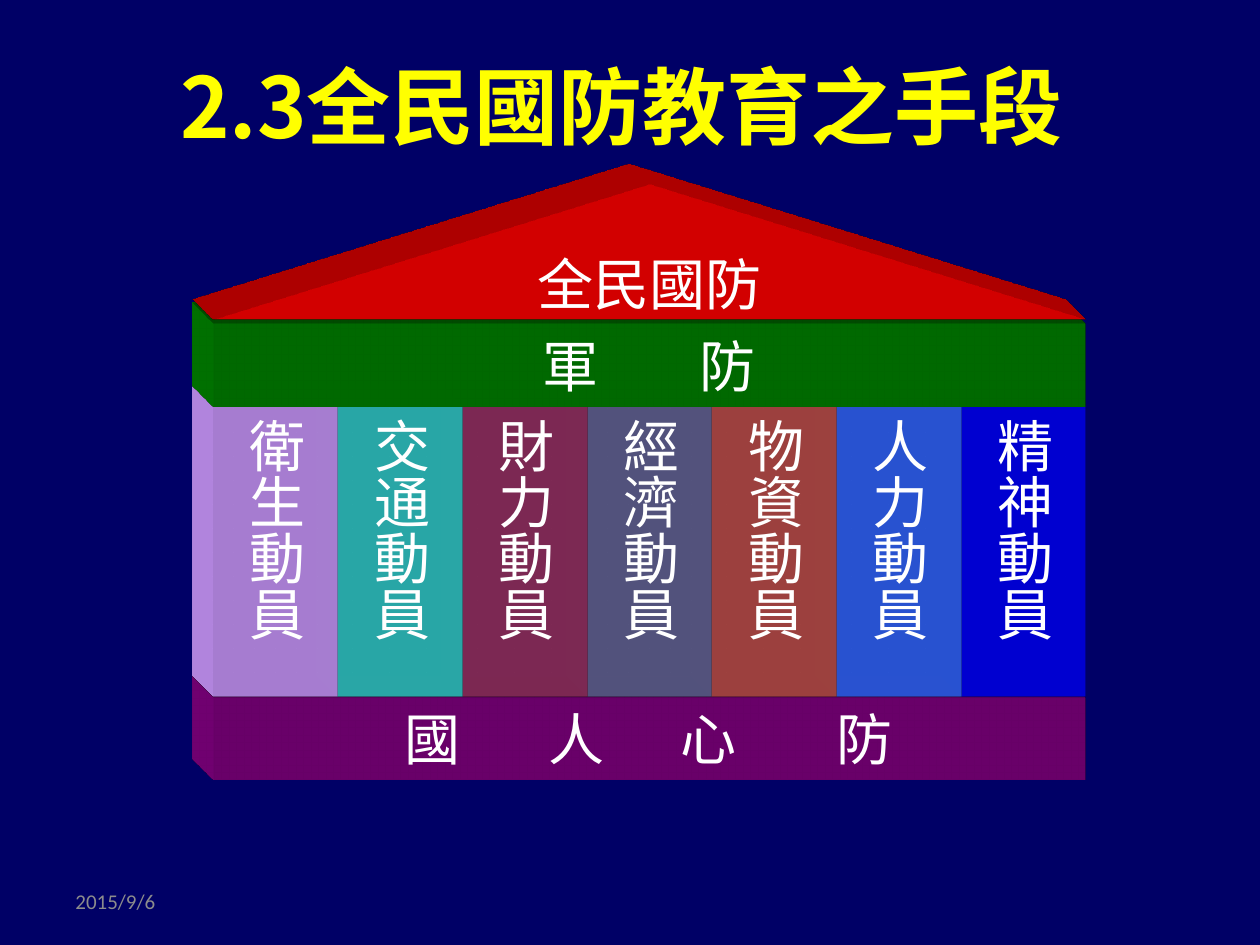
import pptx
import pptx.util
import pptx.dml.color
import pptx.enum.shapes
import pptx.enum.text
import pptx.oxml
import pptx.oxml.ns

RGB = pptx.dml.color.RGBColor
SHAPE = pptx.enum.shapes.MSO_SHAPE
ALIGN = pptx.enum.text.PP_ALIGN
MIDDLE = pptx.enum.text.MSO_ANCHOR.MIDDLE

NAVY = RGB(0x00, 0x00, 0x66)
WHITE = RGB(0xFF, 0xFF, 0xFF)
YELLOW = RGB(0xFF, 0xFF, 0x00)
GREY = RGB(0x8C, 0x8C, 0x8C)
RED = RGB(0xFF, 0x00, 0x00)
GREEN = RGB(0x00, 0x80, 0x00)
PURPLE = RGB(0x80, 0x00, 0x80)
CJK = "Noto Sans CJK SC"

TITLE = "2.3全民國防教育之手段 "
DATE = "2015/9/6"
ROOF = "全民國防"
BEAM = [("軍", 358), ("防", 515)]
BASE = [("國", 220), ("人", 364), ("心", 495), ("防", 652)]
PILLARS = [
    ("衛生動員", RGB(0xCC, 0x99, 0xFF)),
    ("交通動員", RGB(0x33, 0xCC, 0xCC)),
    ("財力動員", RGB(0x99, 0x33, 0x66)),
    ("經濟動員", RGB(0x66, 0x66, 0x99)),
    ("物資動員", RGB(0xC0, 0x50, 0x4D)),
    ("人力動員", RGB(0x33, 0x66, 0xFF)),
    ("精神動員", RGB(0x00, 0x00, 0xFF)),
]
LEFT, WIDE = 213, 873
DEPTH = 430200


def px(n):
    return round(n * 914400 / 126)


def node(xml):
    return pptx.oxml.parse_xml(xml.replace(">", f" {pptx.oxml.ns.nsdecls('a')}>", 1))


def write(shape, text, size, color, font=CJK, align=ALIGN.CENTER, bold=False):
    frame = shape.text_frame
    frame.text = text
    frame.vertical_anchor = MIDDLE
    para = frame.paragraphs[0]
    para.alignment = align
    for run in para.runs:
        run.font.size = pptx.util.Pt(size)
        run.font.name = font
        run.font.bold = bold
        run.font.color.rgb = color
        run.font._element.append(node(f'<a:ea typeface="{font}"></a:ea>'))
    return frame


def label(slide, box, text, *style, **more):
    shape = slide.shapes.add_textbox(*map(px, box))
    write(shape, text, *style, **more).word_wrap = True


def block(group, kind, box, color, text):
    shape = group.shapes.add_shape(kind, *map(px, box))
    shape.shadow.inherit = False
    shape.fill.solid()
    shape.fill.fore_color.rgb = color
    shape.line.fill.background()
    props = shape._element.spPr
    props.append(node(
        '<a:scene3d><a:camera prst="legacyObliqueTopLeft"/>'
        '<a:lightRig rig="legacyFlat3" dir="b"/></a:scene3d>'))
    props.append(node(
        f'<a:sp3d extrusionH="{DEPTH}" prstMaterial="legacyMatte">'
        '<a:bevelT w="13500" h="13500" prst="angle"/>'
        '<a:bevelB w="13500" h="13500" prst="angle"/>'
        f'<a:extrusionClr><a:srgbClr val="{color}"/></a:extrusionClr></a:sp3d>'))
    frame = write(shape, text, 32, WHITE)
    frame.word_wrap = False
    return frame


def bar(group, top, color, words):
    text = "".join("\t" + word for word, _ in words)
    frame = block(group, SHAPE.RECTANGLE, (LEFT, top, WIDE, 83), color, text)
    frame.word_wrap = True
    frame.margin_left = frame.margin_right = 0
    para = frame.paragraphs[0]
    para.alignment = ALIGN.LEFT
    stops = "".join(f'<a:tab pos="{px(x)}" algn="ctr"/>' for _, x in words)
    para._p.get_or_add_pPr().append(node(f"<a:tabLst>{stops}</a:tabLst>"))


def main():
    deck = pptx.Presentation()
    deck.slide_width, deck.slide_height = px(1260), px(945)
    slide = deck.slides.add_slide(deck.slide_layouts[6])
    slide.background.fill.solid()
    slide.background.fill.fore_color.rgb = NAVY

    label(slide, (63, 876, 294, 50), DATE, 12, GREY, font="Calibri", align=ALIGN.LEFT)

    house = slide.shapes.add_group_shape()
    bar(house, 697, PURPLE, BASE)
    step = WIDE / len(PILLARS)
    for i, (text, color) in reversed(list(enumerate(PILLARS))):
        box = (LEFT + i * step, 406, step, 291)
        frame = block(house, SHAPE.RECTANGLE, box, color, text)
        frame._txBody.bodyPr.set("vert", "eaVert")
    bar(house, 324, GREEN, BEAM)
    roof = block(house, SHAPE.ISOSCELES_TRIANGLE, (LEFT, 185, WIDE, 135), RED, ROOF)
    roof.margin_top, roof.margin_bottom = 0, px(6)

    label(slide, (64, 35, 1134, 139), TITLE, 48, YELLOW, bold=True)
    deck.save("out.pptx")


if __name__ == "__main__":
    main()
